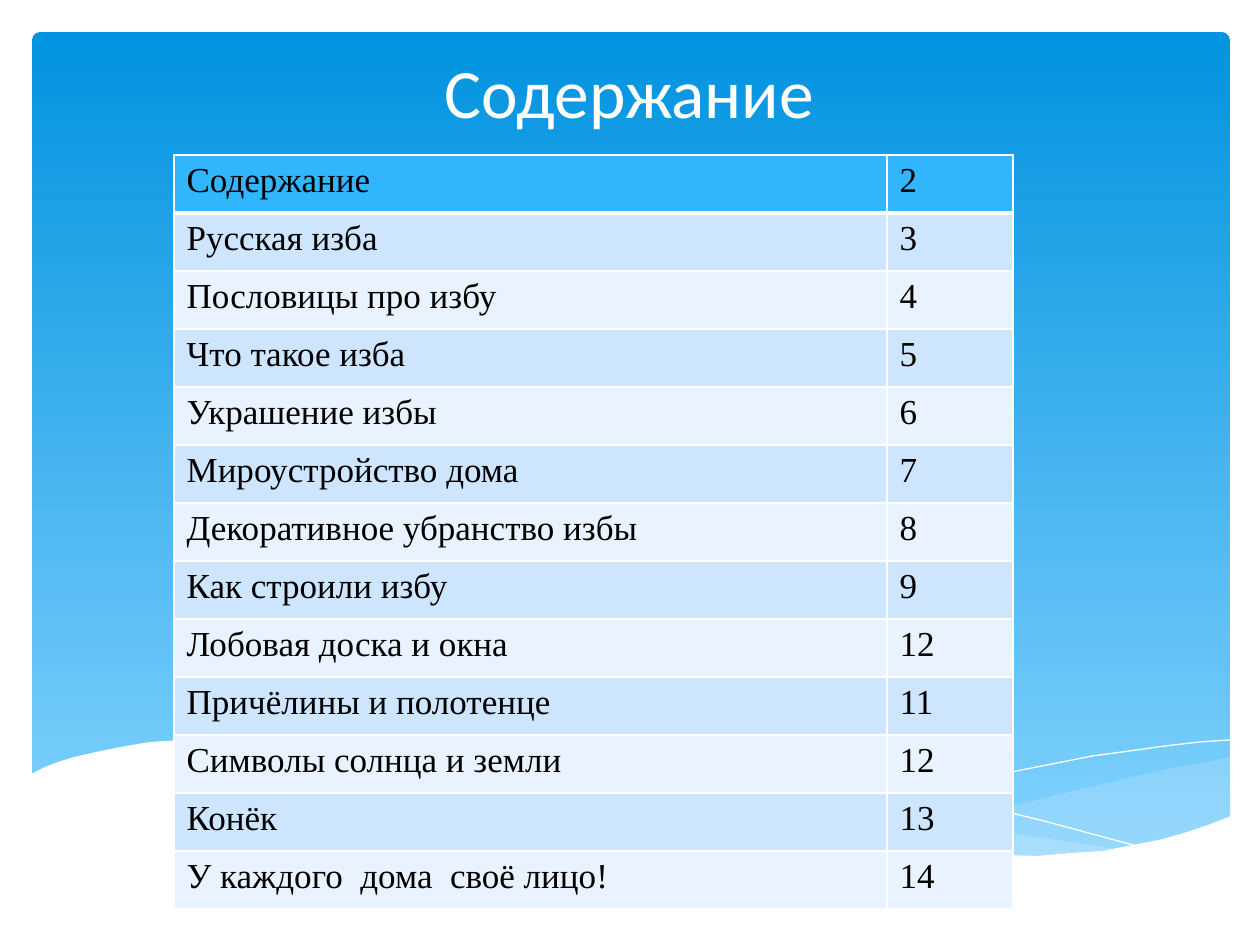
from lxml.etree import SubElement
from pptx import Presentation
from pptx.dml.color import RGBColor
from pptx.enum.shapes import MSO_SHAPE
from pptx.enum.text import MSO_ANCHOR, PP_ALIGN
from pptx.oxml import parse_xml
from pptx.oxml.ns import nsdecls, qn
from pptx.util import Emu, Pt

SCALE = 914400 / 126
COLORS = {
    "white": "FFFFFF", "black": "000000", "top": "0293E0", "base": "83D3FE",
    "mist": "C6E7FC", "head": "31B6FD", "odd": "CEE5FE", "even": "E8F3FF",
}
TITLE = {"name": "Calibri", "size": Pt(39.6)}
BODY = {"name": "Times New Roman", "size": Pt(20)}

ROWS = [
    ("Содержание", "2"), ("Русская изба", "3"), ("Пословицы про избу", "4"),
    ("Что такое изба", "5"), ("Украшение избы", "6"),
    ("Мироустройство дома", "7"), ("Декоративное убранство избы", "8"),
    ("Как строили избу", "9"), ("Лобовая доска и окна", "12"),
    ("Причёлины и полотенце", "11"), ("Символы солнца и земли", "12"),
    ("Конёк", "13"), ("У каждого  дома  своё лицо!", "14"),
]

RIGHT_WAVE = [
    (1230, 757), (1197, 764), (1162, 770), (1124, 779), (1086, 788),
    (1016, 805), (950, 819), (891, 830), (834, 840), (872, 845), (906, 849),
    (940, 853), (970, 856), (999, 856), (1027, 857), (1053, 855), (1077, 854),
    (1100, 852), (1121, 849), (1143, 845), (1162, 840), (1181, 835),
    (1198, 830), (1215, 824), (1231, 818),
]
MID_WAVE = [
    (1126, 851), (1092, 845), (1056, 840), (1018, 834), (978, 827), (935, 818),
    (891, 809), (843, 798), (794, 786), (755, 776), (718, 769), (683, 761),
    (649, 756), (616, 751), (586, 747), (557, 745), (529, 742), (504, 741),
    (479, 740), (456, 740), (435, 741), (413, 742), (396, 743), (378, 745),
    (362, 747), (407, 753), (457, 761), (510, 772), (567, 786), (619, 799),
    (668, 809), (714, 819), (759, 828), (800, 835), (839, 842), (877, 847),
    (911, 852), (944, 855), (975, 856), (1004, 857), (1032, 857), (1057, 857),
    (1082, 856), (1105, 853),
]
LONG_CURVE = [
    (391, 752), (414, 748), (445, 745), (489, 742), (525, 742), (568, 742),
    (616, 745), (672, 751), (733, 759), (803, 769), (877, 782), (959, 800),
    (1048, 822), (1144, 848),
]
SHORT_CURVE = [
    (774, 830), (823, 816), (877, 803), (944, 787), (1017, 771), (1093, 756),
    (1130, 751), (1166, 746), (1200, 742), (1230, 740),
]
FRONT_WAVE = [
    (1231, 816), (1208, 825), (1184, 833), (1159, 840), (1133, 845),
    (1103, 851), (1071, 853), (1037, 856), (999, 855), (959, 853), (915, 849),
    (867, 844), (816, 837), (760, 827), (699, 815), (634, 800), (563, 784),
    (527, 775), (493, 767), (460, 761), (428, 755), (398, 751), (368, 746),
    (341, 743), (315, 741), (266, 738), (223, 738), (184, 740), (150, 742),
    (120, 747), (96, 752), (74, 757), (58, 762), (45, 767), (37, 771),
    (29, 775), (29, 921), (1231, 921),
]


def px(*nums):
    return [Emu(round(n * SCALE)) for n in nums]


def rgb(key):
    return RGBColor.from_string(COLORS[key])


def write(para, text, align, color, style):
    para.text = text
    para.alignment = align
    for key, value in style.items():
        setattr(para.font, key, value)
    para.font.color.rgb = rgb(color)


def add_panel(slide):
    panel = slide.shapes.add_shape(
        MSO_SHAPE.ROUNDED_RECTANGLE, *px(32, 32, 1198, 832))
    panel.adjustments[0] = 0.01
    panel.shadow.inherit = False
    panel.line.fill.background()
    panel.fill.gradient()
    panel.fill.gradient_angle = 270
    for stop, key in zip(panel.fill.gradient_stops, ("top", "base")):
        stop.color.rgb = rgb(key)


def add_path(slide, points, closed):
    pen = slide.shapes.build_freeform(*points[0], scale=SCALE)
    pen.add_line_segments(points[1:], close=closed)
    shape = pen.convert_to_shape()
    shape.shadow.inherit = False
    return shape


def add_wave(slide, points, color, alpha=100):
    """Draw a filled wave; alpha is its opacity in percent."""
    wave = add_path(slide, points, True)
    wave.line.fill.background()
    wave.fill.solid()
    wave.fill.fore_color.rgb = rgb(color)
    if alpha < 100:
        tint = next(wave.element.spPr.iter(qn("a:srgbClr")))
        SubElement(tint, qn("a:alpha"), val=str(alpha * 1000))


def add_curve(slide, points):
    curve = add_path(slide, points, False)
    curve.fill.background()
    curve.line.color.rgb = rgb("white")
    curve.line.width = Pt(0)


def add_title(slide, text):
    frame = slide.shapes.add_textbox(*px(94, 37, 1071, 102)).text_frame
    frame.word_wrap = True
    frame.vertical_anchor = MSO_ANCHOR.BOTTOM
    write(frame.paragraphs[0], text, PP_ALIGN.CENTER, "white", TITLE)


def set_edges(cell, base):
    """Give a cell white borders, with base points at its bottom."""
    props = cell._tc.get_or_add_tcPr()
    for spot, side in enumerate("LRTB"):
        width = Pt(base if side == "B" else 1)
        props.insert(spot, parse_xml(
            f'<a:ln{side} {nsdecls("a")} w="{width}"><a:solidFill>'
            f'<a:srgbClr val="{COLORS["white"]}"/></a:solidFill></a:ln{side}>'))


def add_list(slide, rows):
    table = slide.shapes.add_table(
        len(rows), 2, *px(174, 155, 839, 58 * len(rows))).table
    for col, width in zip(table.columns, px(713, 126)):
        col.width = width
    for num, texts in enumerate(rows):
        table.rows[num].height = px(58)[0]
        shade = ("odd" if num % 2 else "even") if num else "head"
        for cell, text in zip(table.rows[num].cells, texts):
            cell.fill.solid()
            cell.fill.fore_color.rgb = rgb(shade)
            set_edges(cell, 1 if num else 3)
            write(cell.text_frame.paragraphs[0], text,
                  PP_ALIGN.JUSTIFY, "black", BODY)


def main():
    deck = Presentation()
    deck.slide_width, deck.slide_height = px(1260, 945)
    slide = deck.slides.add_slide(deck.slide_layouts[6])
    add_panel(slide)
    add_wave(slide, RIGHT_WAVE, "mist", 29)
    add_wave(slide, MID_WAVE, "mist", 40)
    add_curve(slide, LONG_CURVE)
    add_curve(slide, SHORT_CURVE)
    add_wave(slide, FRONT_WAVE, "white")
    add_list(slide, ROWS)
    add_title(slide, "Содержание")
    deck.save("out.pptx")


if __name__ == "__main__":
    main()
